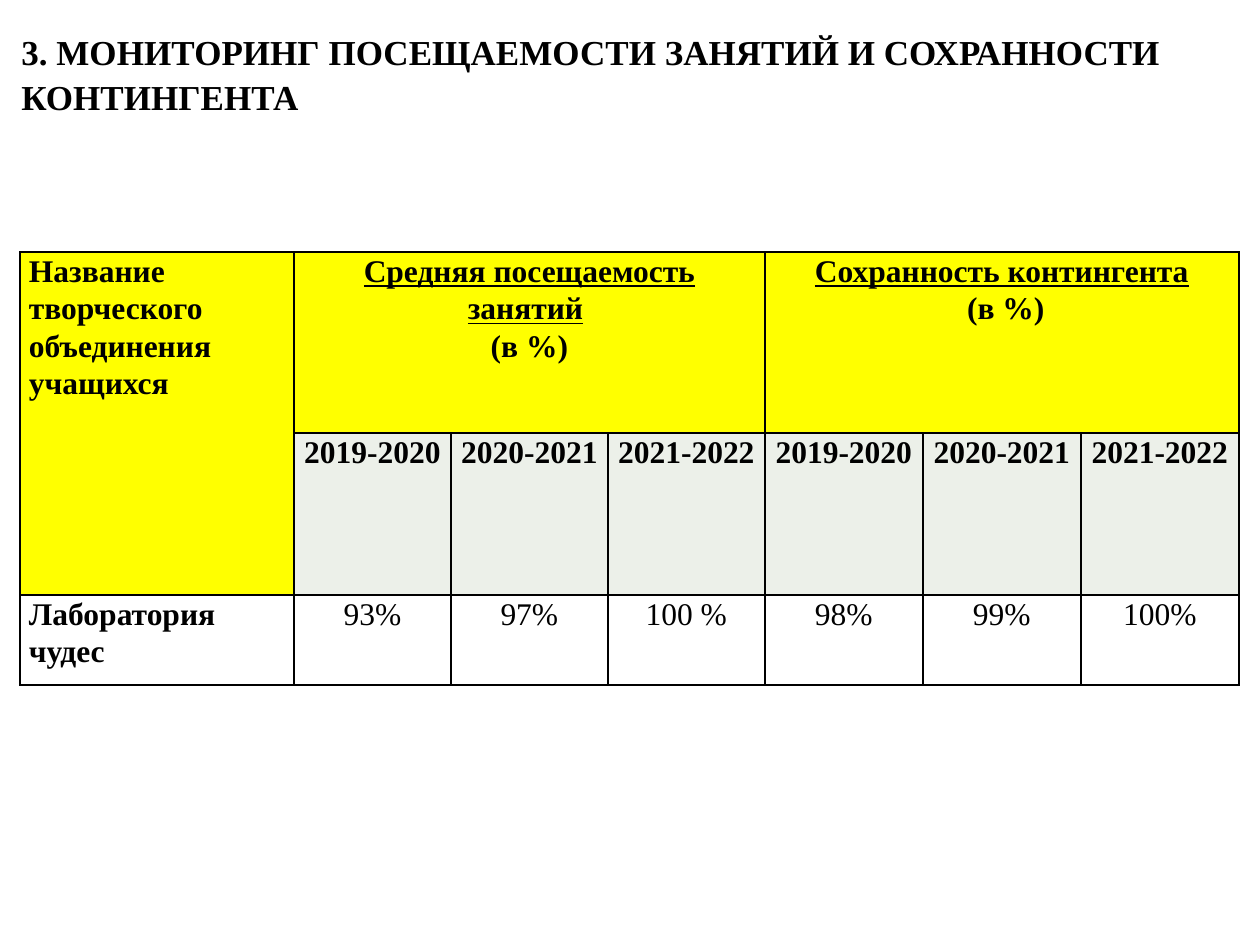
from lxml import etree
from pptx import Presentation
from pptx.dml.color import RGBColor
from pptx.enum.shapes import MSO_SHAPE
from pptx.enum.text import MSO_ANCHOR, PP_ALIGN
from pptx.oxml.ns import qn
from pptx.util import Pt

BLACK = RGBColor(0x00, 0x00, 0x00)
WHITE = RGBColor(0xFF, 0xFF, 0xFF)
YELLOW = RGBColor(0xFF, 0xFF, 0x00)
PALE_GREEN = RGBColor(0xEC, 0xF0, 0xE9)
LEFT, CENTER, JUSTIFY = PP_ALIGN.LEFT, PP_ALIGN.CENTER, PP_ALIGN.JUSTIFY
TOP = MSO_ANCHOR.TOP
RECTANGLE = MSO_SHAPE.RECTANGLE

PX_PER_INCH = 126
YEARS = ["2019-2020", "2020-2021", "2021-2022"]
ATTENDANCE = ["93%", "97%", "100 %"]
RETENTION = ["98%", "99%", "100%"]


def px(length):
    """Turn pixels into EMU."""
    return round(length * 914400 / PX_PER_INCH)


class SlideBuilder:
    """Holds the style and the current slide."""

    font_name = "Times New Roman"
    line_spacing = 1.07

    def __init__(self, page):
        self.page = page

    def add_text(self, frame, paragraphs, size, align=LEFT, bold=True, space_after=0):
        """Fill a text frame with paragraphs of (text, underline) runs."""
        frame.word_wrap = True
        for index, runs in enumerate(paragraphs):
            para = frame.add_paragraph() if index else frame.paragraphs[0]
            para.alignment = align
            para.line_spacing = self.line_spacing
            para.space_after = Pt(space_after)
            for text, underline in runs:
                span = para.add_run()
                span.text = text
                span.font.name = self.font_name
                span.font.size = Pt(size)
                span.font.bold = bold
                span.font.underline = underline
                span.font.color.rgb = BLACK

    def title(self, text, left, top, width, height):
        """Add the white heading box."""
        box = self.page.shapes.add_shape(
            RECTANGLE, px(left), px(top), px(width), px(height))
        box.shadow.inherit = False
        box.fill.solid()
        box.fill.fore_color.rgb = WHITE
        box.line.fill.background()
        box.text_frame.vertical_anchor = TOP
        self.add_text(box.text_frame, [[(text, False)]], 20, space_after=8)

    def table(self, left, top, widths, heights):
        """Add an unstyled table with black borders."""
        frame = self.page.shapes.add_table(
            len(heights), len(widths), px(left), px(top),
            px(sum(widths)), px(sum(heights)))
        table = frame.table
        table.first_row = table.horz_banding = False
        for column, width in zip(table.columns, widths):
            column.width = px(width)
        for row, height in zip(table.rows, heights):
            row.height = px(height)
        for cell in table.iter_cells():
            cell.margin_left = cell.margin_right = px(9)
            cell.margin_top = cell.margin_bottom = 0
            self.border(cell)
            cell.fill.background()
        return table

    def border(self, cell):
        """Draw a thin black line on each side of a cell."""
        properties = cell._tc.get_or_add_tcPr()
        for side in ("a:lnL", "a:lnR", "a:lnT", "a:lnB"):
            line = etree.SubElement(properties, qn(side), w=str(Pt(1)))
            fill = etree.SubElement(line, qn("a:solidFill"))
            etree.SubElement(fill, qn("a:srgbClr"), val=str(BLACK))

    def cell(self, cell, paragraphs, fill=None, align=CENTER, bold=True):
        """Set the text and colour of one table cell."""
        if fill is not None:
            cell.fill.solid()
            cell.fill.fore_color.rgb = fill
        self.add_text(cell.text_frame, paragraphs, 18, align, bold)


def main():
    """Build the attendance slide."""
    deck = Presentation()
    deck.slide_width, deck.slide_height = px(1260), px(945)
    builder = SlideBuilder(deck.slides.add_slide(deck.slide_layouts[6]))
    builder.title("3. МОНИТОРИНГ ПОСЕЩАЕМОСТИ ЗАНЯТИЙ И СОХРАННОСТИ КОНТИНГЕНТА",
                  9, 21, 1240, 101)

    table = builder.table(20, 252, [274] + [157] * 3 + [158] * 3, [181, 162, 90])
    table.cell(0, 0).merge(table.cell(1, 0))
    builder.cell(table.cell(0, 0), [[("Название творческого объединения учащихся", False)]],
                 YELLOW, LEFT)
    builder.cell(table.cell(2, 0), [[("Лаборатория чудес", False)]], align=JUSTIFY)

    groups = [
        ([[("Средняя посещаемость занятий", True), (" ", False)], [("(в %)", False)]],
         ATTENDANCE),
        ([[("Сохранность контингента", True)], [(" (в %)", False)]], RETENTION),
    ]
    for group, (heading, values) in enumerate(groups):
        first = 1 + group * len(YEARS)
        table.cell(0, first).merge(table.cell(0, first + len(YEARS) - 1))
        builder.cell(table.cell(0, first), heading, YELLOW)
        for column, (year, value) in enumerate(zip(YEARS, values), first):
            builder.cell(table.cell(1, column), [[(year, False)]], PALE_GREEN)
            builder.cell(table.cell(2, column), [[(value, False)]], bold=False)

    deck.save("out.pptx")


if __name__ == "__main__":
    main()
